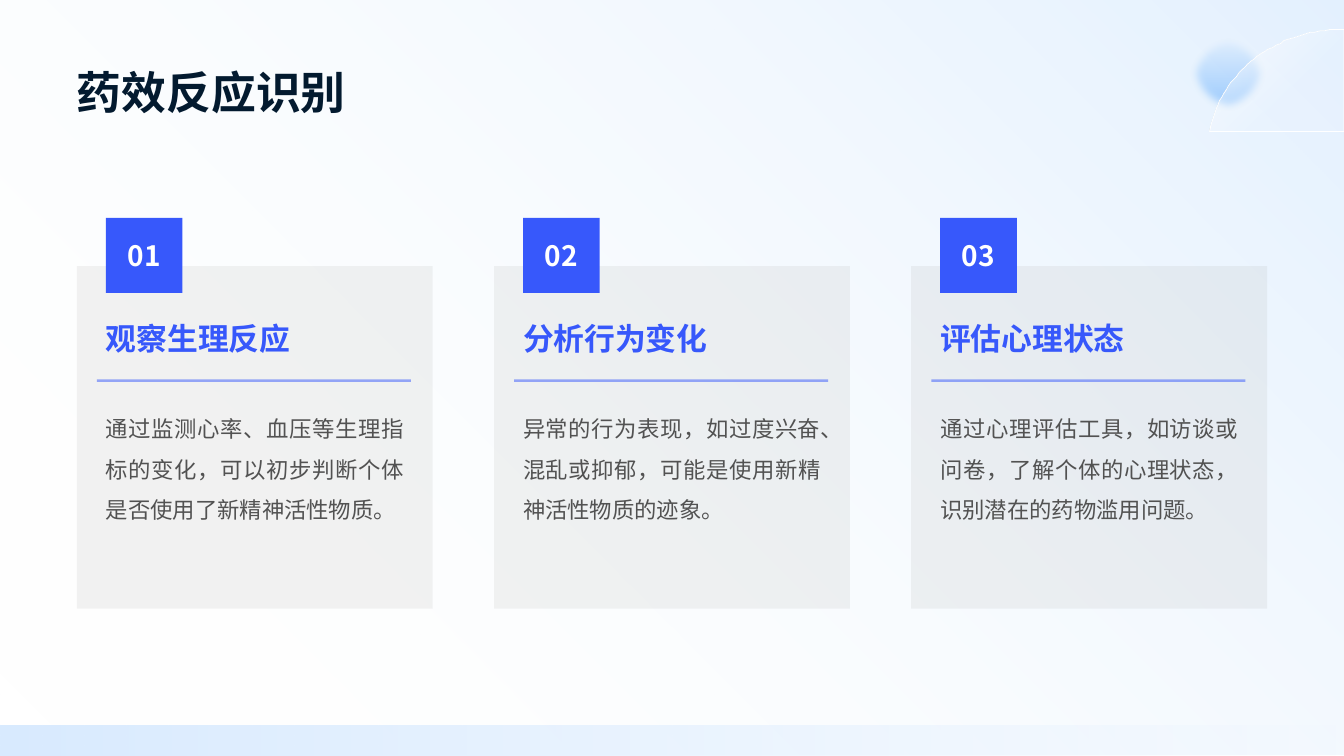
import dataclasses
from typing import Optional

import lxml.etree
import pptx
import pptx.dml.color
import pptx.enum.shapes
import pptx.enum.text
import pptx.oxml.ns
import pptx.util

Pt = pptx.util.Pt
qn = pptx.oxml.ns.qn
SHAPE = pptx.enum.shapes.MSO_SHAPE
ALIGN = pptx.enum.text.PP_ALIGN
ANCHOR = pptx.enum.text.MSO_ANCHOR

CJK_FONT = "Noto Sans CJK SC"
BLUE, SKY, PALE, WHITE = "3758FB", "419BFD", "D9EBFF", "FFFFFF"
SLIDE_WIDTH, SLIDE_HEIGHT = 960, 540
FIRST_CARD_LEFT, CARD_PITCH = 54.9, 298


@dataclasses.dataclass(frozen=True)
class Box:
    left: float
    top: float
    width: float
    height: float

    def lengths(self) -> tuple:
        return tuple(Pt(value) for value in dataclasses.astuple(self))


@dataclasses.dataclass(frozen=True)
class Stop:
    position: float
    color: str
    opacity: int


@dataclasses.dataclass(frozen=True)
class TextStyle:
    size: float
    color: str
    bold: bool = False
    font: str = CJK_FONT
    align: ALIGN = ALIGN.LEFT
    anchor: ANCHOR = ANCHOR.MIDDLE
    spacing: Optional[float] = None
    wrap: bool = True


@dataclasses.dataclass(frozen=True)
class Card:
    number: str
    heading: str
    body: str


TITLE = TextStyle(32, "031A2F", True, font="Arial", anchor=ANCHOR.BOTTOM)
NUMBER = TextStyle(20, WHITE, True, align=ALIGN.CENTER, wrap=False)
HEADING = TextStyle(22, BLUE, True)
BODY = TextStyle(16, "525252", align=ALIGN.JUSTIFY, anchor=ANCHOR.TOP, spacing=1.5)

CARDS = [
    Card("01", "观察生理反应",
         "通过监测心率、血压等生理指标的变化，可以初步判断个体是否使用了新精神活性物质。"),
    Card("02", "分析行为变化",
         "异常的行为表现，如过度兴奋、混乱或抑郁，可能是使用新精神活性物质的迹象。"),
    Card("03", "评估心理状态",
         "通过心理评估工具，如访谈或问卷，了解个体的心理状态，识别潜在的药物滥用问题。"),
]


# Colour, gradient and text helpers
def rgb(color: str) -> pptx.dml.color.RGBColor:
    return pptx.dml.color.RGBColor.from_string(color)


def set_opacity(shape, *opacities: int) -> None:
    for color, opacity in zip(shape._element.spPr.iter(qn("a:srgbClr")), opacities):
        lxml.etree.SubElement(color, qn("a:alpha")).set("val", str(opacity * 1000))


def fill_gradient(shape, start: Stop, end: Stop, angle: float) -> None:
    shape.shadow.inherit = False
    shape.line.fill.background()
    shape.fill.gradient()
    shape.fill.gradient_angle = angle
    for stop, wanted in zip(shape.fill.gradient_stops, (start, end)):
        stop.position = wanted.position
        stop.color.rgb = rgb(wanted.color)
    set_opacity(shape, start.opacity, end.opacity)


def add_plain(slide, kind: SHAPE, box: Box, color: str):
    shape = slide.shapes.add_shape(kind, *box.lengths())
    shape.shadow.inherit = False
    shape.line.fill.background()
    shape.fill.solid()
    shape.fill.fore_color.rgb = rgb(color)
    return shape


def write(shape, text: str, style: TextStyle) -> None:
    frame = shape.text_frame
    frame.auto_size = pptx.enum.text.MSO_AUTO_SIZE.NONE
    frame.word_wrap = style.wrap
    frame.vertical_anchor = style.anchor
    frame.margin_left = frame.margin_right = frame.margin_top = frame.margin_bottom = 0
    frame.text = text
    paragraph = frame.paragraphs[0]
    paragraph.alignment = style.align
    paragraph.line_spacing = style.spacing
    paragraph.font.size = Pt(style.size)
    paragraph.font.bold = style.bold
    paragraph.font.color.rgb = rgb(style.color)
    paragraph.font.name = style.font
    defaults = paragraph._p.pPr.find(qn("a:defRPr"))
    lxml.etree.SubElement(defaults, qn("a:ea")).set("typeface", CJK_FONT)


# Background, corner ornament and footer band
def add_gradient(slide, kind: SHAPE, box: Box, start: Stop, end: Stop, angle: float):
    shape = slide.shapes.add_shape(kind, *box.lengths())
    fill_gradient(shape, start, end, angle)
    return shape


def curve(points: list, steps: int = 40) -> list:
    weights = (1, 3, 3, 1)
    return [
        tuple(sum(weight * (1 - t) ** (3 - i) * t ** i * point[axis]
                  for i, (weight, point) in enumerate(zip(weights, points)))
              for axis in (0, 1))
        for t in (step / steps for step in range(1, steps + 1))
    ]


def add_decor(slide) -> None:
    add_gradient(slide, SHAPE.RECTANGLE, Box(0, 0, SLIDE_WIDTH, 538.6),
                 Stop(0, WHITE, 0), Stop(1, SKY, 15), 45)
    ball = add_gradient(slide, SHAPE.OVAL, Box(848, 23.2, 58, 58),
                        Stop(0, SKY, 0), Stop(1, SKY, 50), 270)
    effects = ball._element.spPr.find(qn("a:effectLst"))
    lxml.etree.SubElement(effects, qn("a:softEdge")).set("rad", str(Pt(6)))

    arc = curve([(865.4, 88.6), (874, 49.7), (913, 20.9), (SLIDE_WIDTH, 20.9)])
    builder = slide.shapes.build_freeform(SLIDE_WIDTH, 20.9, scale=Pt(1))
    builder.add_line_segments([(SLIDE_WIDTH, 94.3), (864, 94.3), (865.4, 88.6)] + arc)
    dome = builder.convert_to_shape()
    fill_gradient(dome, Stop(0.39, WHITE, 5), Stop(0.83, WHITE, 50), 135)
    dome.line.color.rgb = rgb(WHITE)
    dome.line.width = Pt(0.5)

    add_gradient(slide, SHAPE.RECTANGLE, Box(0, 518.4, SLIDE_WIDTH, 21.6),
                 Stop(0, PALE, 0), Stop(1, PALE, 100), 180)


# One numbered card
def add_card(slide, card: Card, left: float) -> None:
    panel = add_plain(slide, SHAPE.RECTANGLE, Box(left, 190.1, 254.2, 244.6), "ADADAD")
    set_opacity(panel, 15)

    text_left = left + 20.7
    body = slide.shapes.add_textbox(*Box(text_left, 287.3, 213.1, 126.7).lengths())
    write(body, card.body, BODY)
    badge = add_plain(slide, SHAPE.RECTANGLE, Box(text_left, 155.6, 54.7, 53.6), BLUE)
    write(badge, card.number, NUMBER)
    heading = slide.shapes.add_textbox(*Box(text_left, 224, 213.1, 35).lengths())
    write(heading, card.heading, HEADING)

    rule_left, rule_top = left + 14.4, 271.9
    rule = slide.shapes.add_connector(
        pptx.enum.shapes.MSO_CONNECTOR.STRAIGHT,
        Pt(rule_left), Pt(rule_top), Pt(rule_left + 224.2), Pt(rule_top))
    rule.line.color.rgb = rgb(BLUE)
    rule.line.width = Pt(1.75)
    set_opacity(rule, 50)
    lxml.etree.SubElement(rule._element.spPr, qn("a:effectLst"))


def main() -> None:
    presentation = pptx.Presentation()
    presentation.slide_width, presentation.slide_height = Pt(SLIDE_WIDTH), Pt(SLIDE_HEIGHT)
    slide = presentation.slides.add_slide(presentation.slide_layouts[5])
    add_decor(slide)

    # Title, brought in front of the background
    title = slide.shapes.title
    title.left, title.top, title.width, title.height = Box(54.9, 28.1, 850.3, 56.9).lengths()
    write(title, "药效反应识别", TITLE)
    slide.shapes._spTree.append(title._element)

    for index, card in enumerate(CARDS):
        add_card(slide, card, FIRST_CARD_LEFT + index * CARD_PITCH)
    presentation.save("out.pptx")


if __name__ == "__main__":
    main()
